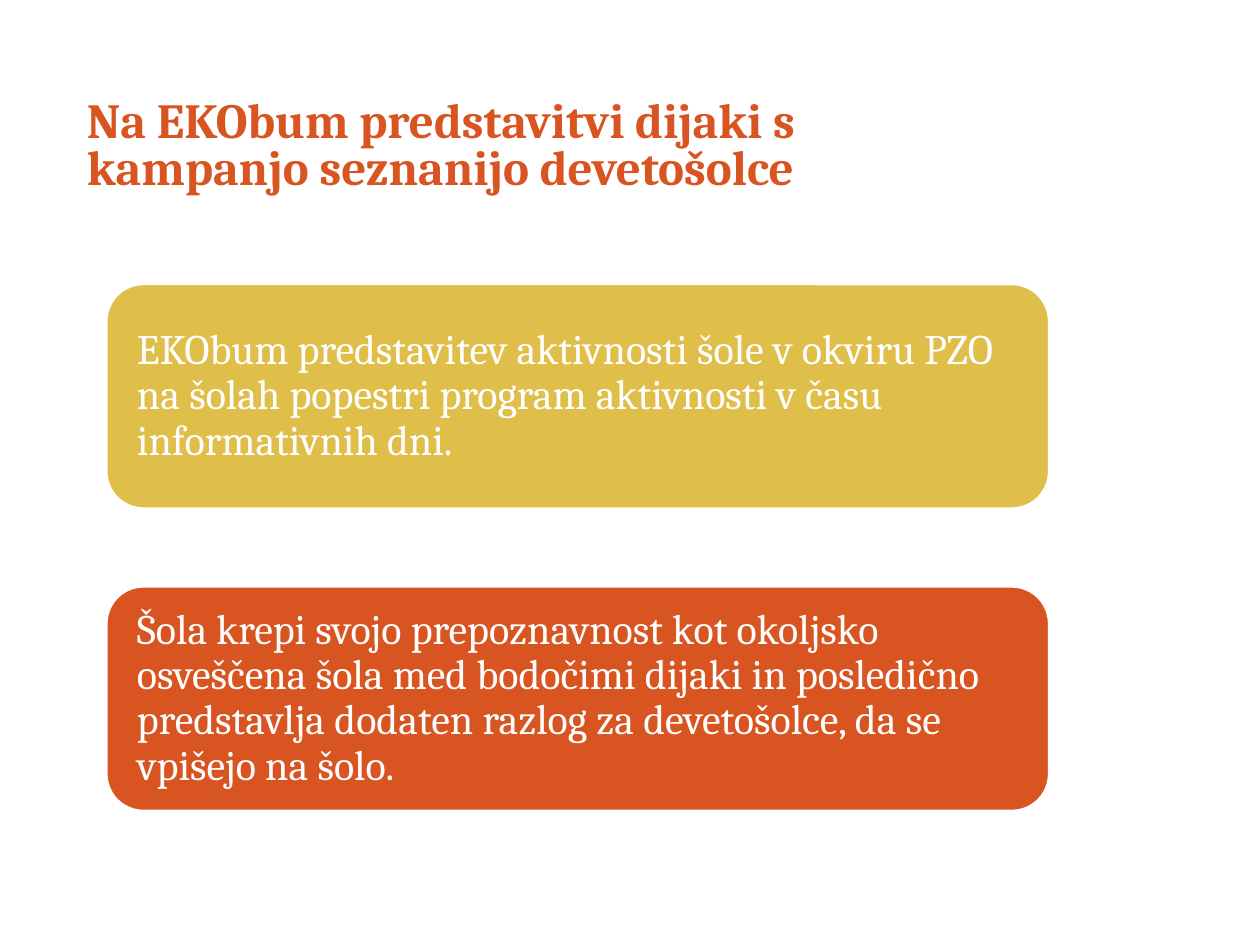
from pptx import Presentation
from pptx.dml.color import RGBColor
from pptx.enum.shapes import MSO_SHAPE
from pptx.enum.text import MSO_ANCHOR, PP_ALIGN
from pptx.util import Inches, Pt

ROUND = MSO_SHAPE.ROUNDED_RECTANGLE
MIDDLE = MSO_ANCHOR.MIDDLE
LEFT = PP_ALIGN.LEFT

COLORS = {"orange": "D85421", "gold": "E0BE4A", "white": "FFFFFF"}
FONT = "Cambria"
TITLE = "Na EKObum predstavitvi dijaki s kampanjo seznanijo devetošolce"
CARDS = [
    ("gold", "EKObum predstavitev aktivnosti šole v okviru PZO na šolah "
             "popestri program aktivnosti v času informativnih dni."),
    ("orange", "Šola krepi svojo prepoznavnost kot okoljsko osveščena šola "
               "med bodočimi dijaki in posledično predstavlja dodaten razlog "
               "za devetošolce, da se vpišejo na šolo."),
]
TOP, STEP = 2.25, 2.4


def color(name):
    return RGBColor.from_string(COLORS[name])


def set_text(shape, text, size, tint, spacing, bold=False):
    frame = shape.text_frame
    frame.text = text
    frame.word_wrap = True
    frame.vertical_anchor = MIDDLE
    para = frame.paragraphs[0]
    para.alignment = LEFT
    para.line_spacing = spacing
    font = para.runs[0].font
    font.name = FONT
    font.size = Pt(size)
    font.bold = bold
    font.color.rgb = color(tint)


def add_title(slide):
    title = slide.shapes.title
    title.left, title.top = Inches(0.59), Inches(0.6)
    title.width, title.height = Inches(7.39), Inches(1.15)
    set_text(title, TITLE, 28, "orange", 0.8, bold=True)


def add_card(slide, top, fill, text):
    card = slide.shapes.add_shape(
        ROUND, Inches(0.84), Inches(top), Inches(7.49), Inches(1.79))
    card.shadow.inherit = False
    card.fill.solid()
    card.fill.fore_color.rgb = color(fill)
    card.line.color.rgb = color("white")
    card.line.width = Pt(2)
    set_text(card, text, 24, "white", 0.9)
    frame = card.text_frame
    frame.margin_left = Inches(0.16)
    frame.margin_right = frame.margin_top = frame.margin_bottom = Inches(0.1)


def main():
    deck = Presentation()
    deck.slide_width, deck.slide_height = Inches(10), Inches(7.5)
    slide = deck.slides.add_slide(deck.slide_layouts[5])
    add_title(slide)
    for row, (fill, text) in enumerate(CARDS):
        add_card(slide, TOP + row * STEP, fill, text)
    deck.save("out.pptx")


if __name__ == "__main__":
    main()
